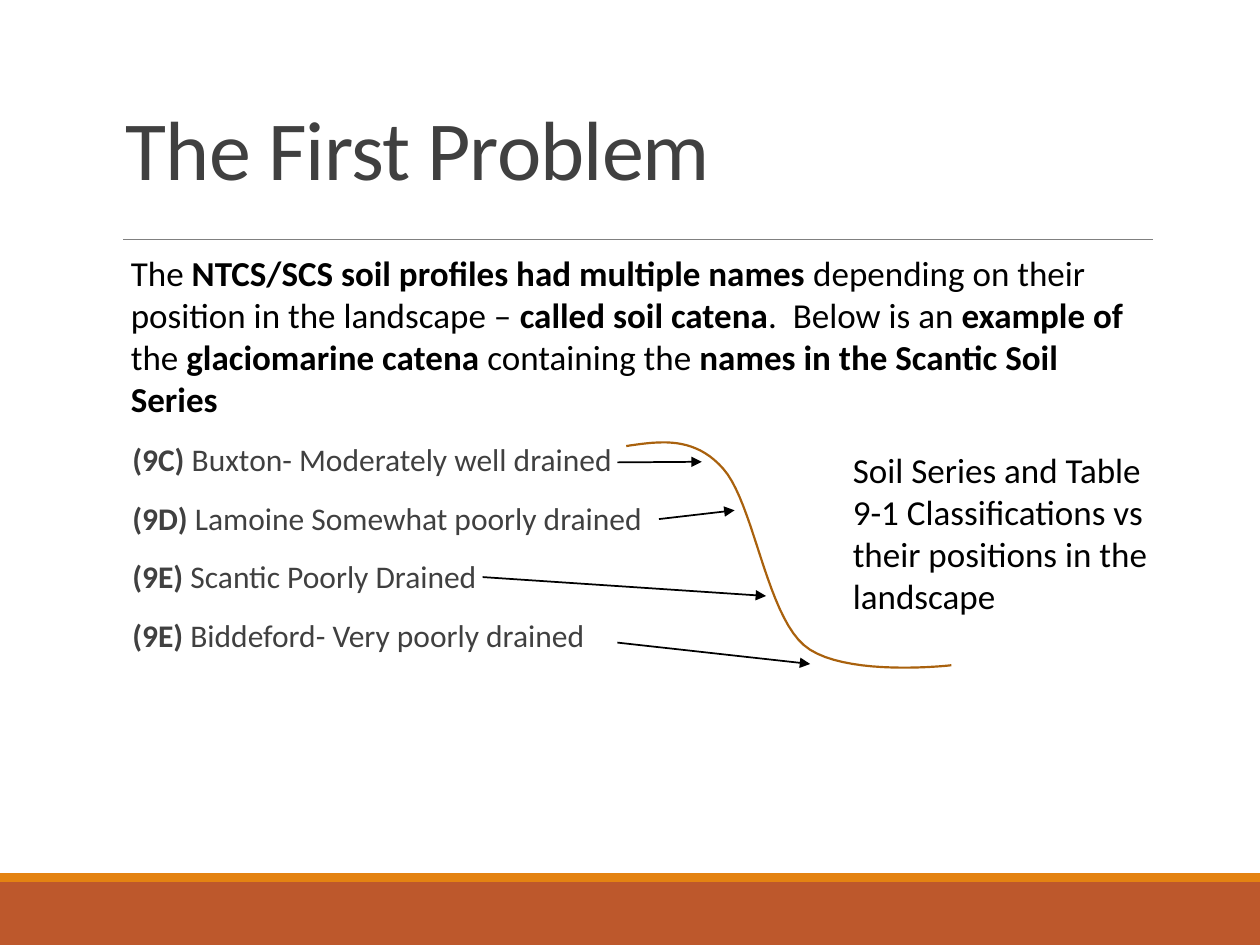
from lxml import etree
from pptx import Presentation
from pptx.dml.color import RGBColor
from pptx.enum.shapes import MSO_CONNECTOR, MSO_SHAPE
from pptx.enum.text import MSO_ANCHOR
from pptx.oxml.ns import qn
from pptx.util import Inches, Pt

STRAIGHT = MSO_CONNECTOR.STRAIGHT
RECT = MSO_SHAPE.RECTANGLE
TOP, BOTTOM = MSO_ANCHOR.TOP, MSO_ANCHOR.BOTTOM

BLACK = RGBColor(0x00, 0x00, 0x00)
DARK = RGBColor(0x40, 0x40, 0x40)
GRAY = RGBColor(0x80, 0x80, 0x80)
RUST = RGBColor(0xBD, 0x58, 0x2C)
ORANGE = RGBColor(0xE4, 0x83, 0x12)
BROWN = RGBColor(0xA9, 0x61, 0x0D)

WIDTH, HEIGHT = Inches(10), Inches(7.5)
COL, ROW = WIDTH / 100, HEIGHT / 75
FONT = "Calibri"

INTRO = [
    ("The ", False),
    ("NTCS/SCS soil profiles had multiple names ", True),
    ("depending on their position in the landscape – ", False),
    ("called soil catena", True),
    (".  Below is an ", False),
    ("example of ", True),
    ("the ", False),
    ("glaciomarine catena ", True),
    ("containing the ", False),
    ("names in the Scantic Soil Series", True),
]
SERIES = [
    ("(9C) ", "Buxton- Moderately well drained"),
    ("(9D) ", "Lamoine Somewhat poorly drained"),
    ("(9E) ", "Scantic Poorly Drained"),
    ("(9E) ", "Biddeford- Very poorly drained"),
]
CAPTION = "Soil Series and Table 9-1 Classifications vs their positions in the landscape"

SLOPE = [
    [(11.4, 0.3), (14.1, -0.1), (16.8, -0.5), (19.1, 2.1)],
    [(19.1, 2.1), (21.5, 4.8), (22.5, 13.5), (25.5, 16.1)],
    [(25.5, 16.1), (28.5, 18.7), (37.2, 17.7), (37.2, 17.7)],
]
ARROWS = [
    ((10.7, 1.6), (17.4, 1.55)),
    ((14, 6.1), (20, 5.4)),
    ((0, 10.7), (22.5, 12.2)),
    ((10.7, 15.9), (26, 17.6)),
]
STEPS = 20


def cells(x, y):
    return round(x * COL), round(y * ROW)


def add_bar(slide, box, color):
    x, y, w, h = box
    sp = slide.shapes.add_shape(RECT, *cells(x, y), *cells(w, h))
    sp.shadow.inherit = False
    sp.fill.solid()
    sp.fill.fore_color.rgb = color
    sp.line.fill.background()


def add_line(slide, start, end, color, width, arrow=False):
    line = slide.shapes.add_connector(STRAIGHT, *cells(*start), *cells(*end))
    line.line.color.rgb = color
    line.line.width = Pt(width)
    if arrow:
        etree.SubElement(line.line._get_or_add_ln(), qn("a:tailEnd"), type="triangle")
    etree.SubElement(line._element.spPr, qn("a:effectLst"))


def add_text(slide, box, paragraphs, size, color, anchor=TOP):
    x, y, w, h = box
    tf = slide.shapes.add_textbox(*cells(x, y), *cells(w, h)).text_frame
    tf.word_wrap = True
    tf.vertical_anchor = anchor
    for i, runs in enumerate(paragraphs):
        p = tf.paragraphs[0] if i == 0 else tf.add_paragraph()
        for text, bold in runs:
            r = p.add_run()
            r.text = text
            r.font.name = FONT
            r.font.size = Pt(size)
            r.font.bold = bold
            r.font.color.rgb = color
    return tf


def add_footer(slide, box):
    x, y, w, h = box
    stripe = 0.7
    add_bar(slide, (x, y + stripe, w, h - stripe), RUST)
    add_bar(slide, (x, y, w, stripe), ORANGE)


def add_title(slide, box):
    x, y, w, h = box
    rule = y + h + 2.8
    add_line(slide, (x + 0.8, rule), (x + w, rule), GRAY, 0.5)
    tf = add_text(slide, box, [[("The First Problem", False)]], 48, DARK, BOTTOM)
    p = tf.paragraphs[0]
    p.line_spacing = 0.85
    p.runs[0]._r.get_or_add_rPr().set("spc", "-50")


def add_series(slide, box):
    rows = [[(code, True), (name, False)] for code, name in SERIES]
    tf = add_text(slide, box, rows, 18, DARK)
    tf.margin_left = tf.margin_right = 0
    for i, p in enumerate(tf.paragraphs):
        p._p.get_or_add_pPr().set("marL", str(Inches(0.15)))
        p.line_spacing = 0.9
        p.space_before = Pt(12 if i else 0)
        p.space_after = Pt(2)


def curve_point(points, t):
    weights = ((1 - t) ** 3, 3 * t * (1 - t) ** 2, 3 * t * t * (1 - t), t ** 3)
    return tuple(sum(k * v for k, v in zip(weights, axis)) for axis in zip(*points))


def add_catena(slide, origin):
    def place(point):
        return origin[0] + point[0], origin[1] + point[1]

    points = [
        cells(*place(curve_point(segment, i / STEPS)))
        for segment in SLOPE
        for i in range(1, STEPS + 1)
    ]
    fb = slide.shapes.build_freeform(*cells(*place(SLOPE[0][0])))
    fb.add_line_segments(points, close=False)
    sp = fb.convert_to_shape()
    sp.shadow.inherit = False
    sp.fill.background()
    sp.line.color.rgb = BROWN
    sp.line.width = Pt(1.25)
    for start, end in ARROWS:
        add_line(slide, place(start), place(end), BLACK, 1, arrow=True)


def main():
    prs = Presentation()
    prs.slide_width, prs.slide_height = WIDTH, HEIGHT
    slide = prs.slides.add_slide(prs.slide_layouts[6])
    add_footer(slide, (0, 69.3, 100, 5.7))
    add_title(slide, (9, 3.1, 82.5, 13.1))
    add_series(slide, (9, 34.8, 82.5, 31.1))
    add_catena(slide, (38.3, 35.1))
    add_text(slide, (66.7, 35.1, 26.4, 14.5), [[(CAPTION, False)]], 20, BLACK)
    add_text(slide, (9.4, 19.5, 81.6, 17.8), [INTRO], 20, BLACK)
    prs.save("out.pptx")


if __name__ == "__main__":
    main()
